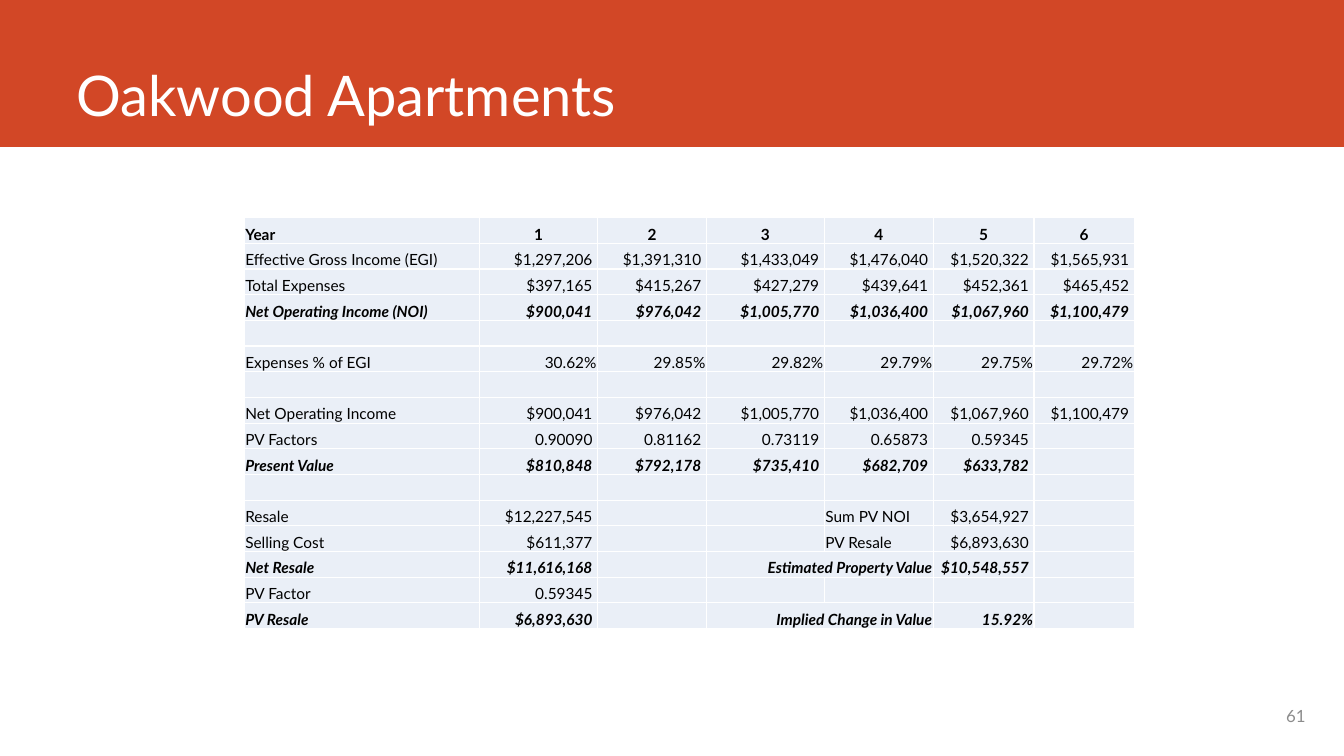
from lxml import etree
from pptx import Presentation
from pptx.dml.color import RGBColor
from pptx.enum.shapes import MSO_SHAPE
from pptx.enum.text import MSO_ANCHOR, PP_ALIGN
from pptx.oxml.ns import qn
from pptx.util import Pt

ORANGE = RGBColor(0xD2, 0x47, 0x26)
WHITE = RGBColor(0xFF, 0xFF, 0xFF)
BLACK = RGBColor(0x00, 0x00, 0x00)
GRAY = RGBColor(0x8C, 0x8C, 0x8C)
PALE_BLUE = RGBColor(0xEA, 0xEF, 0xF7)

COLUMN_WIDTHS = [168.2, 84.2, 77.8, 84.2, 77.8, 72, 71.6]
ROW_HEIGHT = 18.36
NOI = ["$900,041", "$976,042", "$1,005,770", "$1,036,400", "$1,067,960", "$1,100,479"]
CASH_FLOW = [
    ["Year", "1", "2", "3", "4", "5", "6"],
    ["Effective Gross Income (EGI)", "$1,297,206", "$1,391,310", "$1,433,049",
     "$1,476,040", "$1,520,322", "$1,565,931"],
    ["Total Expenses", "$397,165", "$415,267", "$427,279", "$439,641", "$452,361", "$465,452"],
    ["Net Operating Income (NOI)", *NOI],
    [],
    ["Expenses % of EGI", "30.62%", "29.85%", "29.82%", "29.79%", "29.75%", "29.72%"],
    [],
    ["Net Operating Income", *NOI],
    ["PV Factors", "0.90090", "0.81162", "0.73119", "0.65873", "0.59345"],
    ["Present Value", "$810,848", "$792,178", "$735,410", "$682,709", "$633,782"],
    [],
    ["Resale", "$12,227,545", "", "", "Sum PV NOI", "$3,654,927"],
    ["Selling Cost", "$611,377", "", "", "PV Resale", "$6,893,630"],
    ["Net Resale", "$11,616,168", "", "Estimated Property Value", "", "$10,548,557"],
    ["PV Factor", "0.59345"],
    ["PV Resale", "$6,893,630", "", "Implied Change in Value", "", "15.92%"],
]
TOTAL_ROWS = {3, 9, 13, 15}
MERGED_LABEL_ROWS = (13, 15)
LABEL_COLUMNS = (0, 4)
UNDERLINED = (12, 5)


class SlideBuilder:
    font = "Lato"

    def __init__(self, prs):
        self.s = prs.slides.add_slide(prs.slide_layouts[5])

    def style(self, p, size, color, align=PP_ALIGN.LEFT, bold=False, italic=False):
        p.alignment = align
        for r in p.runs:
            r.font.name = self.font
            r.font.size = Pt(size)
            r.font.color.rgb = color
            r.font.bold = bold
            r.font.italic = italic

    def place(self, sp, left, top, width, height):
        sp.left, sp.top, sp.width, sp.height = Pt(left), Pt(top), Pt(width), Pt(height)

    def title(self, text):
        sp = self.s.shapes.title
        self.place(sp, 47.5, 0, 846.7, 95)
        tf = sp.text_frame
        tf.text = text
        tf.vertical_anchor = MSO_ANCHOR.BOTTOM
        self.style(tf.paragraphs[0], 40, WHITE)

    def band(self, width, height):
        """Add the colour band behind the title."""
        sp = self.s.shapes.add_shape(MSO_SHAPE.RECTANGLE, 0, 0, Pt(width), Pt(height))
        sp.shadow.inherit = False
        sp.fill.solid()
        sp.fill.fore_color.rgb = ORANGE
        sp.line.fill.background()
        self.s.shapes.title._element.addprevious(sp._element)

    def page_number(self, text):
        sp = self.s.shapes.add_textbox(Pt(681.8), Pt(496.8), Pt(257.8), Pt(28.8))
        tf = sp.text_frame
        tf.word_wrap = True
        tf.text = text
        tf.vertical_anchor = MSO_ANCHOR.MIDDLE
        self.style(tf.paragraphs[0], 12, GRAY, PP_ALIGN.RIGHT)

    def borders(self, cell):
        tcPr = cell._tc.get_or_add_tcPr()
        for side in "LRTB":
            ln = etree.SubElement(tcPr, qn(f"a:ln{side}"), w=str(Pt(1)))
            fill = etree.SubElement(ln, qn("a:solidFill"))
            etree.SubElement(fill, qn("a:srgbClr"), val=str(WHITE))

    def cell(self, cell, text, align, bold, italic):
        self.borders(cell)
        cell.fill.solid()
        cell.fill.fore_color.rgb = PALE_BLUE
        cell.vertical_anchor = MSO_ANCHOR.BOTTOM
        cell.margin_left = cell.margin_top = Pt(0.7)
        cell.margin_bottom = 0
        is_number = align == PP_ALIGN.RIGHT and text[-1:].isdigit()
        cell.margin_right = Pt(3.6 if is_number else 0.7)
        p = cell.text_frame.paragraphs[0]
        if text:
            p.text = text
            self.style(p, 11, BLACK, align, bold, italic)
        else:
            etree.SubElement(p._p, qn("a:endParaRPr"), sz="1100")

    def table(self, rows, left, top):
        frame = self.s.shapes.add_table(
            len(rows), len(COLUMN_WIDTHS), Pt(left), Pt(top),
            Pt(sum(COLUMN_WIDTHS)), Pt(ROW_HEIGHT * len(rows)))
        table = frame.table
        table.first_row = table.horz_banding = False
        for column, width in zip(table.columns, COLUMN_WIDTHS):
            column.width = Pt(width)
        for i, values in enumerate(rows):
            table.rows[i].height = Pt(ROW_HEIGHT)
            for j in range(len(COLUMN_WIDTHS)):
                text = values[j] if j < len(values) else ""
                if j in LABEL_COLUMNS and text[:1].isalpha():
                    align = PP_ALIGN.LEFT
                else:
                    align = PP_ALIGN.RIGHT if i else PP_ALIGN.CENTER
                total = i in TOTAL_ROWS
                self.cell(table.cell(i, j), text, align, total or i == 0, total)
        for i in MERGED_LABEL_ROWS:
            table.cell(i, 3).merge(table.cell(i, 4))
        table.cell(*UNDERLINED).text_frame.paragraphs[0].runs[0].font.underline = True


def main():
    prs = Presentation()
    prs.slide_width, prs.slide_height = Pt(960), Pt(540)
    slide = SlideBuilder(prs)
    slide.title("Oakwood Apartments")
    slide.band(960, 105)
    slide.table(CASH_FLOW, 174.5, 155.5)
    slide.page_number("61")
    prs.save("out.pptx")


if __name__ == "__main__":
    main()
